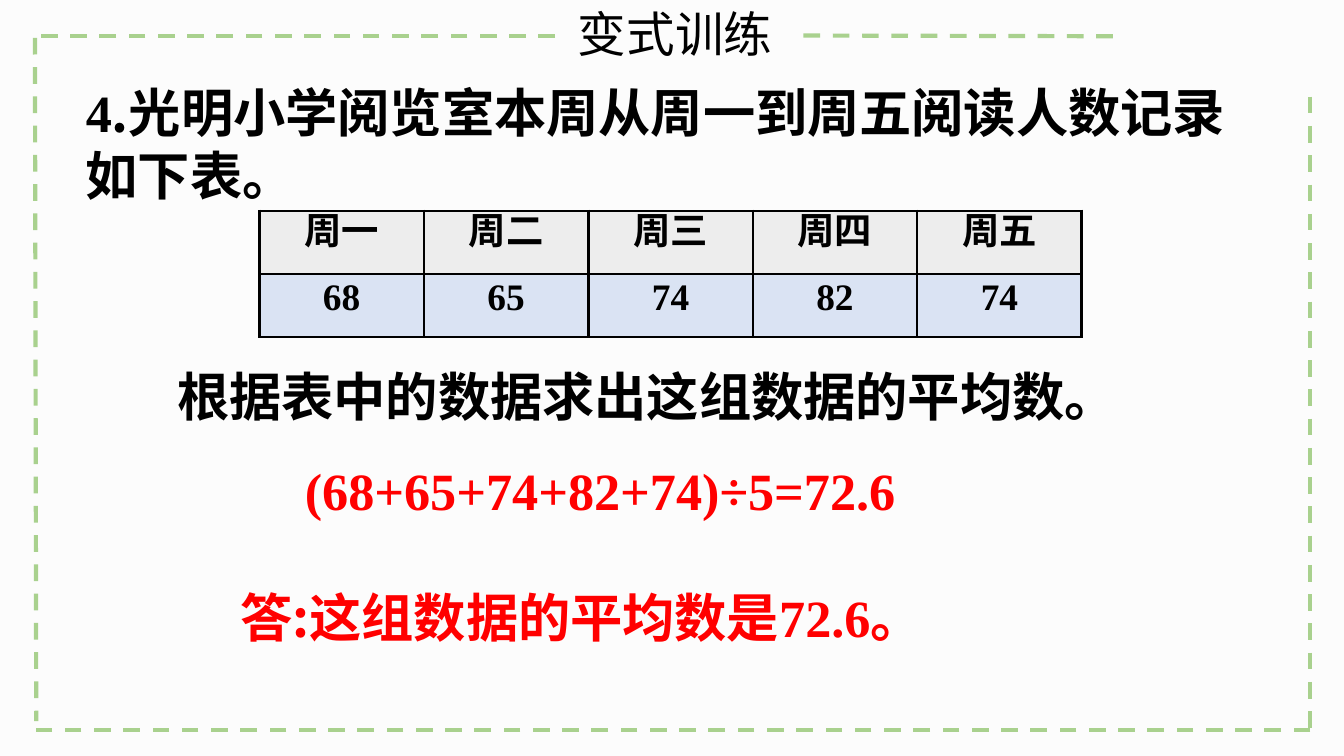
from dataclasses import dataclass
from lxml import etree
from pptx import Presentation
from pptx.dml.color import RGBColor
from pptx.enum.dml import MSO_LINE
from pptx.enum.shapes import MSO_CONNECTOR
from pptx.enum.text import MSO_ANCHOR, MSO_AUTO_SIZE, PP_ALIGN
from pptx.oxml.ns import qn
from pptx.util import Inches, Pt

DASH, STRAIGHT = MSO_LINE.DASH, MSO_CONNECTOR.STRAIGHT
TOP, MIDDLE = MSO_ANCHOR.TOP, MSO_ANCHOR.MIDDLE
GROW = MSO_AUTO_SIZE.SHAPE_TO_FIT_TEXT
LEFT, CENTER = PP_ALIGN.LEFT, PP_ALIGN.CENTER
WIDE = Inches(10)
HIGH = WIDE * 9 // 16
HAN, ROMAN = "Noto Sans CJK SC", "Times New Roman"
BLACK, RED, GREEN = "000000", "FF0000", "A9D18E"


@dataclass
class Run:
    text: str
    face: str = HAN


@dataclass
class Para:
    runs: list[Run]
    indent: float = 0  # inches
    before: float = 0  # points


@dataclass
class Block:
    """A text block; the box is in shares of the slide's size."""
    box: tuple[float, float, float, float]
    paras: list[Para]
    color: str = BLACK


def color(code: str) -> RGBColor:
    return RGBColor.from_string(code)


def place(box: tuple) -> list[int]:
    return [round(n * size) for n, size in zip(box, (WIDE, HIGH) * 2)]


def apply(item, values: dict) -> None:
    for name, value in values.items():
        setattr(item, name, value)


def write(para, runs: list[Run], size: int, code: str, bold: bool = True) -> None:
    for part in runs:
        run = para.add_run()
        run.text = part.text
        apply(run.font, {"size": Pt(size), "bold": bold, "name": part.face})
        run.font.color.rgb = color(code)
        latin = run.font._element.find(qn("a:latin"))
        east = etree.Element(qn("a:ea"), typeface=HAN)
        latin.addnext(east)


def draw_line(ends: tuple[float, float, float, float]) -> None:
    line = slide.shapes.add_connector(STRAIGHT, *place(ends))
    apply(line.line, {"width": Pt(2.25), "dash_style": DASH})
    line.line.color.rgb = color(GREEN)
    etree.SubElement(line._element.spPr, qn("a:effectLst"))


def draw_block(block: Block) -> None:
    frame = slide.shapes.add_textbox(*place(block.box)).text_frame
    apply(frame, {"word_wrap": True, "auto_size": GROW})
    for i, item in enumerate(block.paras):
        para = frame.add_paragraph() if i else frame.paragraphs[0]
        if item.indent:
            para._p.get_or_add_pPr().set("indent", str(Inches(item.indent)))
        if item.before:
            para.space_before = Pt(item.before)
        write(para, item.runs, 28, block.color)


def draw_cell(cell, run: Run, fill: str) -> None:
    apply(cell, {"margin_left": 0, "margin_right": 0, "margin_top": 0,
                 "margin_bottom": 0, "vertical_anchor": MIDDLE})
    for side in "LRTB":
        edge = etree.SubElement(cell._tc.get_or_add_tcPr(), qn(f"a:ln{side}"),
                                w=str(Pt(1.5)))
        paint = etree.SubElement(edge, qn("a:solidFill"))
        etree.SubElement(paint, qn("a:srgbClr"), val=BLACK)
    cell.fill.solid()
    cell.fill.fore_color.rgb = color(fill)
    para = cell.text_frame.paragraphs[0]
    apply(para, {"alignment": CENTER, "line_spacing": Pt(14.2)})
    write(para, [run], 20, BLACK)


def draw_table(box: tuple, rows: list[tuple]) -> None:
    count = len(rows[0][0])
    table = slide.shapes.add_table(len(rows), count, *place(box)).table
    apply(table, {"first_row": False, "horz_banding": False})
    for r, (words, face, fill) in enumerate(rows):
        for c, word in enumerate(words):
            draw_cell(table.cell(r, c), Run(word, face), fill)


deck = Presentation()
apply(deck, {"slide_width": WIDE, "slide_height": HIGH})
slide = deck.slides.add_slide(deck.slide_layouts[5])
slide.background.fill.solid()
slide.background.fill.fore_color.rgb = color("FCFCFC")

# Dashed frame, open around the title
X, Y, END, FOOT = 0.027, 0.048, 0.975, 0.966
for ends in [(0.026, 0.05, X, 0.954), (END, 0.128, END, FOOT),
             (END, FOOT, X, FOOT), (0.828, Y, 0.592, 0.047),
             (0.413, Y, X, Y)]:
    draw_line(ends)

# Title
title = slide.shapes.title
apply(title, dict(zip(("left", "top", "width", "height"),
                      place((0.42, -0.004, 0.173, 0.096)))))
apply(title.text_frame, {"word_wrap": True, "auto_size": GROW,
                         "vertical_anchor": TOP})
head = title.text_frame.paragraphs[0]
head.alignment = LEFT
write(head, [Run("变式训练")], 26, BLACK, False)

# Question, task and answer
for block in [
    Block((0.054, 0.098, 0.895, 0.185), [Para([
        Run("4", ROMAN),
        Run(".光明小学阅览室本周从周一到周五阅读人数记录如下表。")])]),
    Block((0.083, 0.473, 0.74, 0.101), [
        Para([Run("根据表中的数据求出这组数据的平均数。")], 0.39)]),
    Block((0.169, 0.598, 0.674, 0.269), [
        Para([Run("(68+65+74+82+74)÷5=72.6", ROMAN)], 0.48),
        Para([Run("答:这组数据的平均数是"), Run("72.6", ROMAN), Run("。")],
             before=34)], RED),
]:
    draw_block(block)

# Readers per day
draw_table((0.193, 0.279, 0.612, 0.167), [
    (["周一", "周二", "周三", "周四", "周五"], HAN, "EDEDED"),
    (["68", "65", "74", "82", "74"], ROMAN, "DAE3F3"),
])

deck.save("out.pptx")
